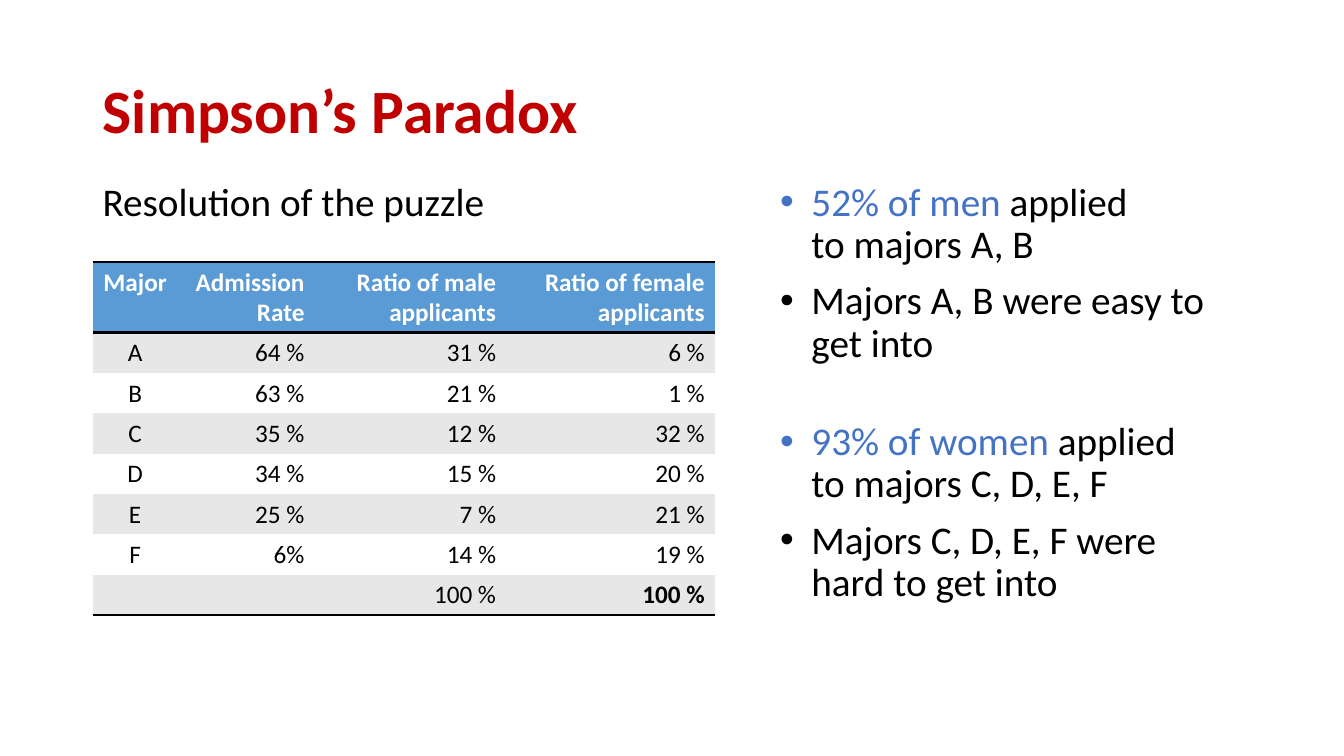
from lxml import etree
from pptx import Presentation
from pptx.dml.color import RGBColor
from pptx.enum.text import MSO_ANCHOR, PP_ALIGN
from pptx.oxml.ns import qn
from pptx.util import Inches, Pt

LEFT, CENTER, RIGHT = PP_ALIGN.LEFT, PP_ALIGN.CENTER, PP_ALIGN.RIGHT
MIDDLE = MSO_ANCHOR.MIDDLE
RED = RGBColor(0xC0, 0x00, 0x00)
BLACK = RGBColor(0x00, 0x00, 0x00)
WHITE = RGBColor(0xFF, 0xFF, 0xFF)
HEADER_BLUE = RGBColor(0x5B, 0x9B, 0xD5)
BAND_GREY = RGBColor(0xE7, 0xE7, 0xE7)
ACCENT_BLUE = RGBColor(0x44, 0x72, 0xC4)
NO_STYLE_NO_GRID = "{2D5ABB26-0587-4C30-8999-92F81FD0307C}"

MARGIN = Inches(0.92)
BODY_TOP = Inches(1.76)
CONTENT_WIDTH = Inches(11.5)


def write(paragraph, text, size=28, color=BLACK, bold=False, align=LEFT,
          line_spacing=0.9, before=10):
    """Append text to a paragraph; a newline becomes a line break."""
    paragraph.alignment = align
    paragraph.line_spacing = line_spacing
    paragraph.space_before = Pt(before)
    for number, line in enumerate(text.split("\n")):
        if number:
            paragraph.add_line_break()
        run = paragraph.add_run()
        run.text = line
        run.font.name = "Calibri"
        run.font.size = Pt(size)
        run.font.bold = bold
        run.font.color.rgb = color


def add_rule(cell, side):
    """Draw a black 2 pt border on one side ("lnT" or "lnB") of a cell."""
    line = etree.SubElement(cell._tc.get_or_add_tcPr(), qn(f"a:{side}"), w=str(Pt(2)))
    fill = etree.SubElement(line, qn("a:solidFill"))
    etree.SubElement(fill, qn("a:srgbClr"), val=str(BLACK))


prs = Presentation()
prs.slide_width, prs.slide_height = Inches(13.33), Inches(7.5)
slide = prs.slides.add_slide(prs.slide_layouts[5])

# Title
title = slide.shapes.title
title.left, title.top = MARGIN, Inches(0.4)
title.width, title.height = CONTENT_WIDTH, Inches(1.45)
title.text_frame.vertical_anchor = MIDDLE
write(title.text_frame.paragraphs[0], "Simpson’s Paradox", size=44, color=RED,
      bold=True, before=0)

# Subtitle
subtitle = slide.shapes.add_textbox(MARGIN, BODY_TOP, CONTENT_WIDTH, Inches(5))
subtitle.text_frame.word_wrap = True
write(subtitle.text_frame.paragraphs[0], "Resolution of the puzzle")

# Admissions table
admissions = [
    ("Major", "Admission\nRate", "Ratio of male\napplicants", "Ratio of female\napplicants"),
    ("A", "64 %", "31 %", "6 %"),
    ("B", "63 %", "21 %", "1 %"),
    ("C", "35 %", "12 %", "32 %"),
    ("D", "34 %", "15 %", "20 %"),
    ("E", "25 %", "7 %", "21 %"),
    ("F", "6%", "14 %", "19 %"),
    ("", "", "100 %", "100 %"),
]
column_widths = [0.84, 1.36, 1.9, 2.07]
last_row, last_column = len(admissions) - 1, len(column_widths) - 1
frame = slide.shapes.add_table(len(admissions), len(column_widths), MARGIN, Inches(2.6),
                               Inches(sum(column_widths)), Inches(3.5))
table = frame.table
table.horz_banding = False
table._tbl.tblPr.find(qn("a:tableStyleId")).text = NO_STYLE_NO_GRID
for column, width in zip(table.columns, column_widths):
    column.width = Inches(width)

for r, record in enumerate(admissions):
    is_header = r == 0
    table.rows[r].height = Inches(0.7 if is_header else 0.4)
    for c, value in enumerate(record):
        cell = table.cell(r, c)
        if is_header:
            add_rule(cell, "lnT")
        if r in (0, last_row):
            add_rule(cell, "lnB")
        cell.fill.solid()
        cell.fill.fore_color.rgb = HEADER_BLUE if is_header else BAND_GREY if r % 2 else WHITE
        write(cell.text_frame.paragraphs[0], value, size=18,
              color=WHITE if is_header else BLACK,
              bold=is_header or (r, c) == (last_row, last_column),
              align=RIGHT if c else CENTER, line_spacing=1.0, before=0)

# Findings: coloured lead, remaining text, space before
findings = [
    ("52% of men ", "applied\nto majors A, B", 10),
    ("", "Majors A, B were easy to get into", 10),
    ("93% of women ", "applied\nto majors C, D, E, F", 40),
    ("", "Majors C, D, E, F were hard to get into", 10),
]
findings_frame = slide.shapes.add_textbox(Inches(7.64), BODY_TOP, Inches(4.4),
                                          Inches(4.9)).text_frame
findings_frame.word_wrap = True
for number, (lead, rest, before) in enumerate(findings):
    paragraph = findings_frame.add_paragraph() if number else findings_frame.paragraphs[0]
    if lead:
        write(paragraph, lead, color=ACCENT_BLUE, before=before)
    write(paragraph, rest, before=before)
    properties = paragraph._p.get_or_add_pPr()
    properties.set("marL", str(Inches(0.31)))
    properties.set("indent", str(-Inches(0.31)))
    etree.SubElement(properties, qn("a:buFont"), typeface="Arial")
    etree.SubElement(properties, qn("a:buChar"), char="•")

prs.save("out.pptx")
